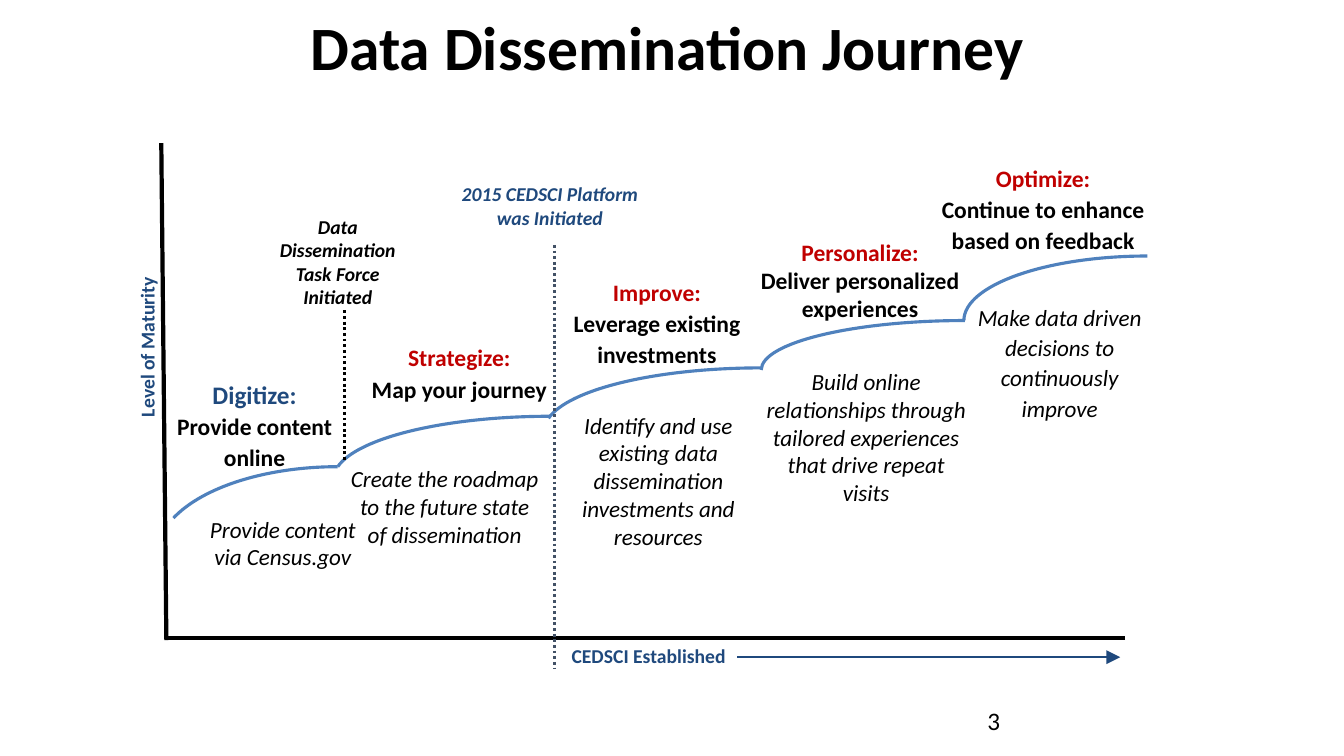
from dataclasses import dataclass
from typing import NamedTuple

from lxml.etree import SubElement
from pptx import Presentation
from pptx.dml.color import RGBColor
from pptx.enum.dml import MSO_LINE_DASH_STYLE as Dash
from pptx.enum.shapes import MSO_CONNECTOR_TYPE as ConnectorType
from pptx.enum.text import MSO_ANCHOR as Anchor, PP_ALIGN as Align
from pptx.oxml.ns import qn
from pptx.util import Inches, Pt


@dataclass(frozen=True)
class Theme:
    """Colours, font and type sizes of the slide."""
    font: str = "Calibri"
    black: str = "000000"
    navy: str = "1F497D"
    red: str = "C00000"
    curve: str = "4F81BD"
    slate: str = "425166"
    title: float = 44
    large: float = 18
    heading: float = 16.8
    detail: float = 16.5
    label: float = 14


class Box(NamedTuple):
    """A rectangle in inches."""
    left: float
    top: float
    width: float
    height: float = 0.6

    def within(self, x, y, width, height=0.6):
        """Return a box offset from this one's top left corner."""
        return Box(self.left + x, self.top + y, width, height)


class Stage(NamedTuple):
    """One step: its curve and the offsets and widths of its two texts."""
    name: str
    claim: str
    detail: str
    curve: Box
    bend: tuple
    claim_place: tuple
    detail_place: tuple
    color: str = Theme.red
    name_size: float = Theme.heading
    claim_spacing: float = 1.1
    detail_spacing: float = 1.0
    claim_inset: float = 0.05


THEME = Theme()
PLOT = Box(1.65, 1.42, 9.51, 4.91)
QUARTER = (0.55, 1, 0.45)
PARTIAL = (0.49, 0.905, 0.42)
SHALLOW = (0.43, 0.82, 0.39)
STAGES = [
    Stage("Digitize:", "Provide content online", "Provide content via Census.gov",
          Box(0.07, 3.21, 1.63, 0.51), SHALLOW, (-0.08, -0.95, 1.77),
          (0.23, 0.43, 1.71), color=THEME.navy, name_size=THEME.large),
    Stage("Strategize:", "Map your journey",
          "Create the roadmap to the future state of dissemination",
          Box(1.7, 2.71, 2.11, 0.5), PARTIAL, (0.01, -0.8, 2.39), (0.08, 0.43, 1.96)),
    Stage("Improve:", "Leverage existing investments",
          "Identify and use existing data dissemination investments and resources",
          Box(3.79, 2.23, 2.11, 0.5), PARTIAL, (0.05, -0.97, 2.05), (0.11, 0.38, 1.96)),
    Stage("Personalize:", "Deliver personalized experiences",
          "Build online relationships through tailored experiences that drive repeat visits",
          Box(5.9, 1.76, 2.02, 0.49), QUARTER, (-0.37, -0.9, 2.7),
          (0, 0.42, 2.08), claim_spacing=1.0),
    Stage("Optimize:", "Continue to enhance based on feedback",
          "Make data driven decisions to continuously improve",
          Box(7.91, 1.12, 1.82, 0.64), QUARTER, (-0.34, -0.94, 2.25),
          (0, 0.39, 1.9), detail_spacing=1.1, claim_inset=0),
]


def style_paragraph(paragraph, text, size, color=THEME.black, bold=False,
                    italic=False, align=Align.CENTER, spacing=1.0):
    """Write formatted text into a paragraph."""
    paragraph.alignment = align
    paragraph.line_spacing = spacing
    run = paragraph.add_run()
    run.text = text
    run.font.name = THEME.font
    run.font.size = Pt(size)
    run.font.bold = bold
    run.font.italic = italic
    run.font.color.rgb = RGBColor.from_string(color)


def add_text(slide, box, text, size, inset=(0.05, 0.05), wrap=True,
             anchor=Anchor.TOP, rotation=0, **formatting):
    """Add a text box and return its text frame."""
    shape = slide.shapes.add_textbox(*map(Inches, box))
    shape.rotation = rotation
    frame = shape.text_frame
    frame.word_wrap = wrap
    frame.vertical_anchor = anchor
    frame.margin_left = frame.margin_right = Inches(inset[0])
    frame.margin_top = frame.margin_bottom = Inches(inset[1])
    style_paragraph(frame.paragraphs[0], text, size, **formatting)
    return frame


def add_line(slide, start, end, color, width, dash=None, arrow=False):
    """Add a straight line, optionally dotted or ending in an arrowhead."""
    connector = slide.shapes.add_connector(
        ConnectorType.STRAIGHT, *map(Inches, (*start, *end)))
    connector.line.color.rgb = RGBColor.from_string(color)
    connector.line.width = Pt(width)
    if dash:
        connector.line.dash_style = dash
    if arrow:
        SubElement(connector.line._get_or_add_ln(), qn("a:tailEnd"),
                   type="triangle", w="lg", len="lg")
    SubElement(connector._element.spPr, qn("a:effectLst"))


def add_curve(slide, box, bend):
    """Draw one Bezier arc from the upper right to the lower left of the box."""
    near, far, drop = bend
    controls = [(1, 0), (1 - near, 0), (1 - far, drop), (0, 1)]
    points = [(Inches(box.left + x * box.width), Inches(box.top + y * box.height))
              for x, y in controls]
    builder = slide.shapes.build_freeform(*points[0])
    builder.add_line_segments(points[1:], close=False)
    shape = builder.convert_to_shape()
    outline = next(shape._element.iter(qn("a:path")))
    segments = outline.findall(qn("a:lnTo"))
    bezier = SubElement(outline, qn("a:cubicBezTo"))
    for segment in segments:
        bezier.append(segment[0])
        outline.remove(segment)
    shape.shadow.inherit = False
    shape.fill.background()
    shape.line.color.rgb = RGBColor.from_string(THEME.curve)
    shape.line.width = Pt(2.25)


def add_axes(slide, box):
    """Draw the two axes and the maturity label."""
    bottom = box.top + box.height
    add_line(slide, (box.left - 0.05, box.top), (box.left, bottom + 0.02), THEME.black, 3)
    add_line(slide, (box.left + box.width, bottom), (box.left + 0.02, bottom),
             THEME.black, 3)
    add_text(slide, box.within(-0.97, 1.87, 1.6, 0.29), "Level of Maturity", THEME.label,
             inset=(0.1, 0.05), wrap=False, rotation=270, color=THEME.navy,
             bold=True, align=Align.LEFT, spacing=0.8)


def add_stage(slide, box, stage):
    """Draw one stage's curve with its claim above and detail below."""
    curve = box.within(*stage.curve)
    add_curve(slide, curve, stage.bend)
    frame = add_text(slide, curve.within(*stage.claim_place), stage.name, stage.name_size,
                     inset=(stage.claim_inset, stage.claim_inset), color=stage.color,
                     bold=True, spacing=1.1)
    style_paragraph(frame.add_paragraph(), stage.claim, THEME.heading, bold=True,
                    spacing=stage.claim_spacing)
    add_text(slide, curve.within(*stage.detail_place), stage.detail, THEME.detail,
             italic=True, spacing=stage.detail_spacing)


def add_milestones(slide, box):
    """Mark the task force, the platform and the established period."""
    left, top = box.left, box.top
    add_line(slide, (left + 1.77, top + 1.66), (left + 1.77, top + 3.16),
             THEME.black, 2, dash=Dash.ROUND_DOT)
    add_line(slide, (left + 3.85, top + 1.01), (left + 3.85, top + 5.21),
             THEME.slate, 2, dash=Dash.ROUND_DOT)
    add_text(slide, box.within(0.99, 0.66, 1.42), "Data Dissemination Task Force Initiated",
             THEME.label, bold=True, italic=True)
    add_text(slide, box.within(2.74, 0.34, 2.13), "2015 CEDSCI Platform was Initiated",
             THEME.label, color=THEME.navy, bold=True, italic=True)
    add_text(slide, box.within(3.92, 4.96, 1.75, 0.29), "CEDSCI Established", THEME.label,
             inset=(0.1, 0.05), wrap=False, color=THEME.navy, bold=True,
             align=Align.LEFT, spacing=0.8)
    add_line(slide, (left + 5.66, top + 5.1), (left + 9.46, top + 5.1),
             THEME.navy, 1.75, arrow=True)


def add_journey_slide(presentation):
    """Add the slide with its number, journey diagram and title."""
    slide = presentation.slides.add_slide(presentation.slide_layouts[6])
    add_text(slide, Box(8.73, 6.95, 2.25, 0.4), "3", THEME.large, inset=(0.1, 0.05))
    add_axes(slide, PLOT)
    for stage in STAGES:
        add_stage(slide, PLOT, stage)
    add_milestones(slide, PLOT)
    add_text(slide, Box(2.16, -0.17, 8.92, 1.25), "Data Dissemination Journey",
             THEME.title, inset=(0.1, 0.05), anchor=Anchor.MIDDLE, bold=True)


def main():
    """Build and save the presentation."""
    presentation = Presentation()
    presentation.slide_width = Inches(13.33)
    presentation.slide_height = Inches(7.5)
    add_journey_slide(presentation)
    presentation.save("out.pptx")


if __name__ == "__main__":
    main()
